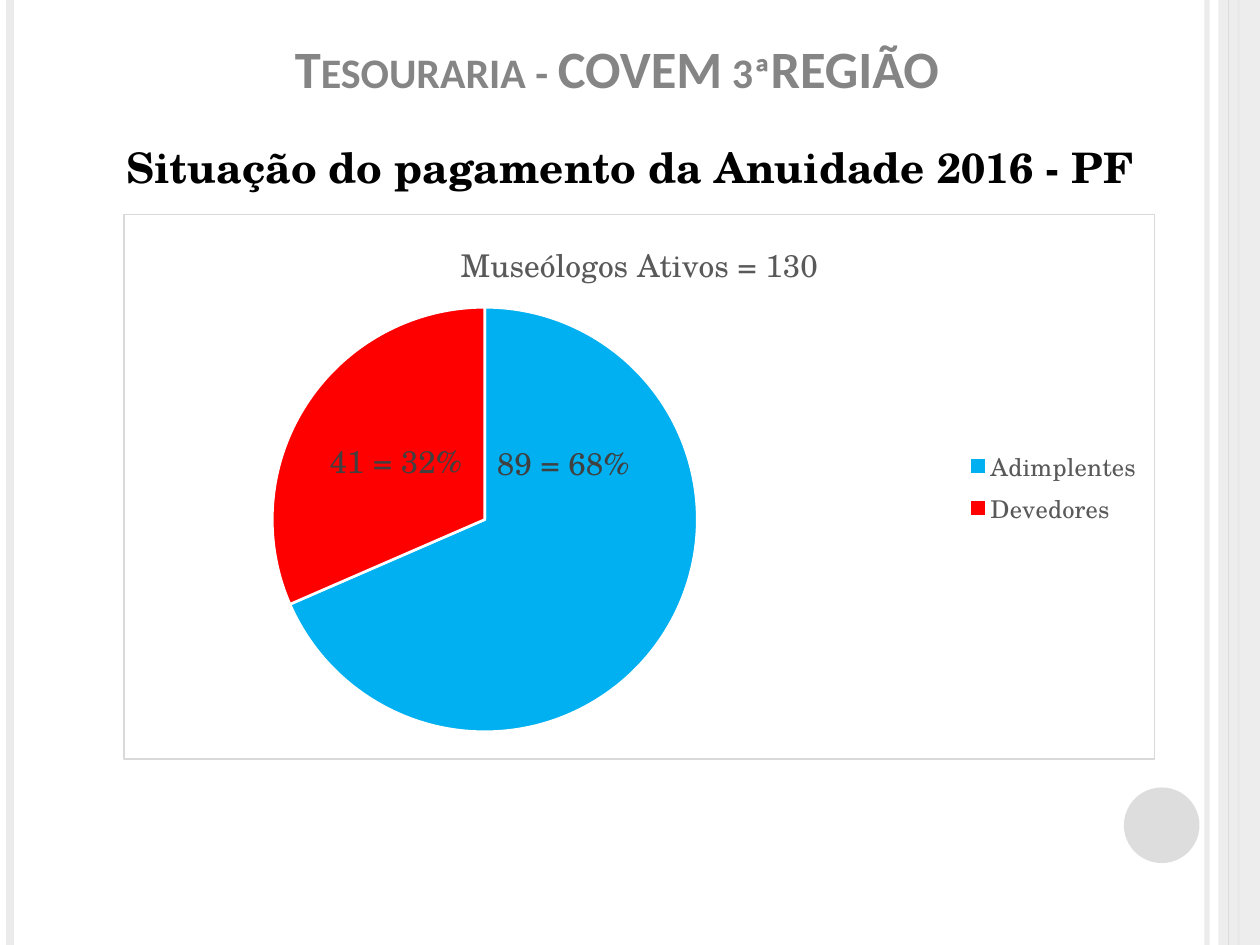
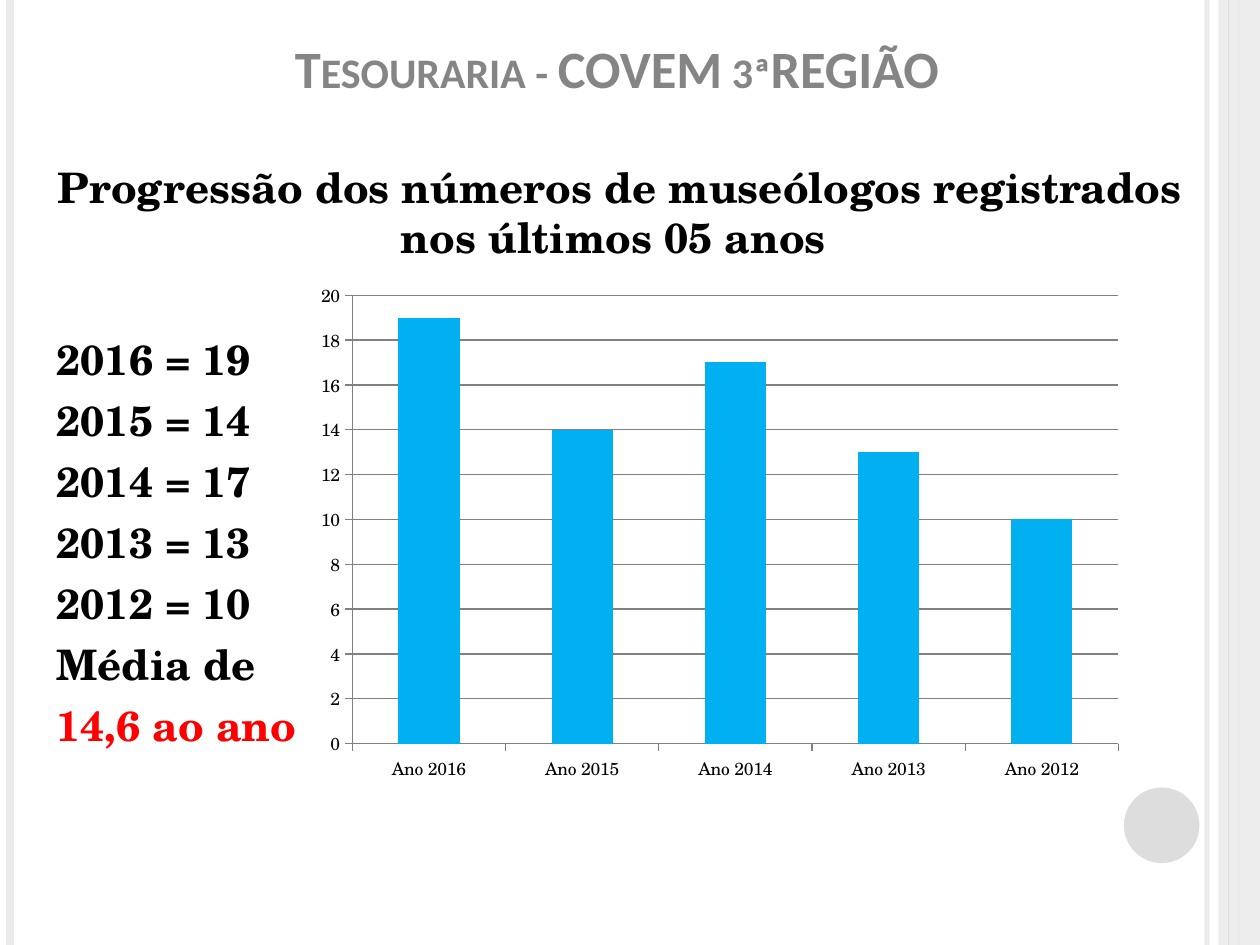
from lxml.etree import SubElement
from pptx import Presentation
from pptx.chart.data import CategoryChartData
from pptx.dml.color import RGBColor
from pptx.enum.chart import (XL_CHART_TYPE, XL_LABEL_POSITION,
                             XL_LEGEND_POSITION, XL_TICK_MARK)
from pptx.enum.shapes import MSO_CONNECTOR, MSO_SHAPE
from pptx.enum.text import MSO_ANCHOR, MSO_AUTO_SIZE, PP_ALIGN
from pptx.oxml import parse_xml
from pptx.oxml.ns import nsdecls, qn
from pptx.util import Inches, Pt

WHITE = RGBColor(0xFF, 0xFF, 0xFF)
BLACK = RGBColor(0, 0, 0)
PALE = RGBColor(0xEB, 0xEB, 0xEB)
SILVER = RGBColor(0xDD, 0xDD, 0xDD)
BORDER = RGBColor(0xD9, 0xD9, 0xD9)
TITLE_GREY = RGBColor(0x85, 0x85, 0x85)
AXIS_GREY = RGBColor(0x80, 0x80, 0x80)
CHART_GREY = RGBColor(0x59, 0x59, 0x59)
LABEL_GREY = RGBColor(0x40, 0x40, 0x40)
BLUE = RGBColor(0x00, 0xB0, 0xF0)
RED = RGBColor(0xFF, 0, 0)

TITLE = "Tesouraria - COVEM 3ªREGIÃO"
TITLE_FONT = "Calibri"
BODY_FONT = "TeX Gyre Schola"
HEIGHT = 7.5


def place(s, left, top, width, height):
    s.left, s.top = Inches(left), Inches(top)
    s.width, s.height = Inches(width), Inches(height)


def set_font(font, name, size, color, bold=False):
    font.name, font.size, font.bold = name, Pt(size), bold
    font.color.rgb = color


def set_alpha(s, percent):
    color = s.element.xpath(".//a:srgbClr")[0]
    SubElement(color, qn("a:alpha")).set("val", str(percent * 1000))


def add_vertical_line(slide, x, color, width):
    line = slide.shapes.add_connector(
        MSO_CONNECTOR.STRAIGHT, Inches(x), 0, Inches(x), Inches(HEIGHT))
    line.line.color.rgb = color
    line.line.width = Pt(width)
    SubElement(line.element.spPr, qn("a:effectLst"))
    return line


def add_solid(slide, kind, box, color):
    sp = slide.shapes.add_shape(kind, *map(Inches, box))
    sp.shadow.inherit = False
    sp.fill.solid()
    sp.fill.fore_color.rgb = color
    sp.line.fill.background()
    return sp


def decorate_layout(layout, slide):
    inner_line = add_vertical_line(slide, 9.58, PALE, 3)
    set_alpha(inner_line, 93)
    left_line = add_vertical_line(slide, 0.08, PALE, 4.5)
    outer_line = add_vertical_line(slide, 9.83, SILVER, 1.5)
    band = add_solid(slide, MSO_SHAPE.RECTANGLE, (9.67, 0, 0.33, HEIGHT), PALE)
    set_alpha(band, 87)
    band_line = add_vertical_line(slide, 9.75, SILVER, 0.75)
    disc = add_solid(slide, MSO_SHAPE.OVAL, (8.92, 6.25, 0.6, 0.6), SILVER)
    for s in (inner_line, left_line, outer_line, band, band_line, disc):
        layout.shapes.element.append(s.element)


def add_title(slide):
    s = slide.shapes.title
    place(s, 2.24, 0.21, 6.72, 0.63)
    tf = s.text_frame
    tf.auto_size = MSO_AUTO_SIZE.NONE
    tf.vertical_anchor = MSO_ANCHOR.BOTTOM
    p = tf.paragraphs[0]
    p.alignment = PP_ALIGN.LEFT
    r = p.add_run()
    r.text = TITLE
    set_font(r.font, TITLE_FONT, 30, TITLE_GREY, True)
    r._r.get_or_add_rPr().set("cap", "small")


def add_paragraph(tf, text, color=BLACK, align=PP_ALIGN.LEFT, before=6):
    p = tf.add_paragraph() if tf.text else tf.paragraphs[0]
    p.alignment = align
    p.space_before = Pt(before)
    r = p.add_run()
    r.text = text
    set_font(r.font, BODY_FONT, 24, color, True)
    pPr = p._p.get_or_add_pPr()
    pPr.set("marL", "0")
    pPr.set("indent", "0")
    SubElement(pPr, qn("a:buNone"))


def add_body(slide, box, heading):
    s = slide.placeholders[1]
    place(s, *box)
    tf = s.text_frame
    tf.auto_size = MSO_AUTO_SIZE.NONE
    add_paragraph(tf, heading, align=PP_ALIGN.CENTER)
    return tf


def manual_layout(target, **values):
    parts = "".join(f'<c:{k} val="{v}"/>' for k, v in values.items())
    return parse_xml(f'<c:layout {nsdecls("c")}><c:manualLayout>{target}'
                     f'{parts}</c:manualLayout></c:layout>')


def set_plot_area(chart, x, y, w, h):
    area = chart.element.xpath(".//c:plotArea")[0]
    for old in area.findall(qn("c:layout")):
        area.remove(old)
    area.insert(0, manual_layout('<c:layoutTarget val="inner"/>', xMode="edge",
                                 yMode="edge", x=x, y=y, w=w, h=h))


def add_chart(slide, kind, box, values, plot_area):
    data = CategoryChartData()
    data.categories = list(values)
    data.add_series("Series 1", list(values.values()))
    chart = slide.shapes.add_chart(kind, *map(Inches, box), data).chart
    set_font(chart.font, BODY_FONT, 10, BLACK)
    set_plot_area(chart, *plot_area)
    return chart


def frame_chart(chart):
    spPr = parse_xml(
        f'<c:spPr {nsdecls("c", "a")}><a:solidFill><a:srgbClr val="{WHITE}"/>'
        f'</a:solidFill><a:ln w="{Pt(0.75)}"><a:solidFill>'
        f'<a:srgbClr val="{BORDER}"/></a:solidFill></a:ln></c:spPr>')
    chart.element.find(qn("c:txPr")).addprevious(spPr)


def label_slices(chart, slices):
    series = chart.plots[0].series[0]
    labels = series.data_labels
    labels.show_value = True
    labels.show_percentage = True
    labels.position = XL_LABEL_POSITION.CENTER
    set_font(labels.font, BODY_FONT, 18, LABEL_GREY)
    for i, (color, text) in enumerate(slices):
        point = series.points[i]
        point.format.fill.solid()
        point.format.fill.fore_color.rgb = color
        point.format.line.color.rgb = WHITE
        point.format.line.width = Pt(1.5)
        label = point.data_label
        r = label.text_frame.paragraphs[0].add_run()
        r.text = text
        set_font(r.font, BODY_FONT, 18, LABEL_GREY)
        label.position = XL_LABEL_POSITION.CENTER
    for flag in chart.element.xpath(".//c:dLbl/c:showPercent"):
        flag.set("val", "1")
    first_idx = chart.element.xpath(".//c:dLbl/c:idx")[0]
    first_idx.addnext(manual_layout("", x=-0.01, y=-0.21))


def add_payment_pie(slide):
    chart = add_chart(slide, XL_CHART_TYPE.PIE, (0.98, 1.7, 8.19, 4.33),
                      {"Adimplentes": 89, "Devedores": 41},
                      (0.14, 0.17, 0.42, 0.78))
    frame_chart(chart)
    chart.has_title = True
    r = chart.chart_title.text_frame.paragraphs[0].add_run()
    r.text = "Museólogos Ativos = 130"
    set_font(r.font, BODY_FONT, 18, CHART_GREY)
    chart.chart_title.include_in_layout = False
    chart.has_legend = True
    chart.legend.position = XL_LEGEND_POSITION.RIGHT
    chart.legend.include_in_layout = False
    set_font(chart.legend.font, BODY_FONT, 14, CHART_GREY)
    label_slices(chart, ((BLUE, "89 = 68%"), (RED, "41 = 32%")))


def add_registration_columns(slide, counts):
    chart = add_chart(slide, XL_CHART_TYPE.COLUMN_CLUSTERED,
                      (2.4, 2.18, 6.61, 4.09),
                      {f"Ano {year}": n for year, n in counts.items()},
                      (0.06, 0.04, 0.92, 0.87))
    chart.has_title = False
    chart.has_legend = False
    plot = chart.plots[0]
    plot.gap_width = 150
    plot.vary_by_categories = False
    fill = plot.series[0].format.fill
    fill.solid()
    fill.fore_color.rgb = BLUE
    axis = chart.value_axis
    axis.minimum_scale, axis.maximum_scale, axis.major_unit = 0, 20, 2
    axis.has_major_gridlines = True
    lines = [axis.major_gridlines.format.line]
    for ax in (axis, chart.category_axis):
        ax.major_tick_mark = XL_TICK_MARK.OUTSIDE
        lines.append(ax.format.line)
    for line in lines:
        line.color.rgb = AXIS_GREY
        line.width = Pt(0.75)


def main():
    prs = Presentation()
    prs.slide_width, prs.slide_height = Inches(10), Inches(HEIGHT)
    layout = prs.slide_layouts[1]

    payment = prs.slides.add_slide(layout)
    decorate_layout(layout, payment)
    add_title(payment)
    add_body(payment, (0.59, 1.07, 8.82, 5.19),
             "Situação do pagamento da Anuidade 2016 - PF")
    add_payment_pie(payment)

    registration = prs.slides.add_slide(layout)
    add_title(registration)
    counts = {2016: 19, 2015: 14, 2014: 17, 2013: 13, 2012: 10}
    tf = add_body(registration, (0.35, 1.23, 9.13, 5.42),
                  "Progressão dos números de museólogos registrados "
                  "nos últimos 05 anos ")
    for i, (year, n) in enumerate(counts.items()):
        add_paragraph(tf, f"{year} = {n}", before=6 if i else 41)
    add_paragraph(tf, "Média de")
    add_paragraph(tf, "14,6 ao ano", RED)
    add_registration_columns(registration, counts)

    prs.save("out.pptx")


if __name__ == "__main__":
    main()
